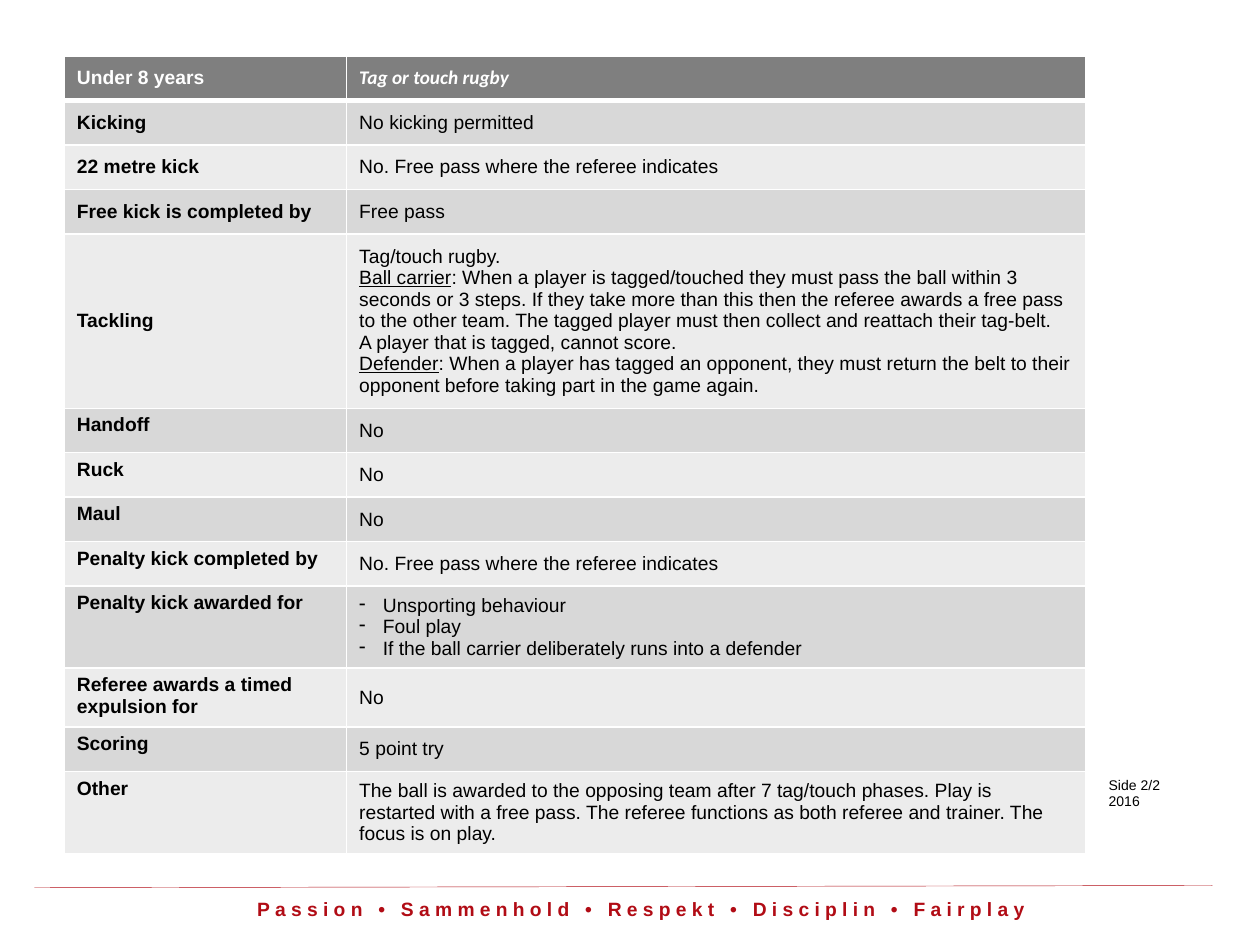
import pptx
import pptx.dml.color
import pptx.enum.shapes
import pptx.enum.text
import pptx.oxml
import pptx.oxml.ns
import pptx.util
from lxml import etree

Pt = pptx.util.Pt
ANCHOR = pptx.enum.text.MSO_ANCHOR
ALIGN = pptx.enum.text.PP_ALIGN

COLORS = {
    "header": "7F7F7F",
    "dark_band": "D8D8D8",
    "light_band": "ECECEC",
    "white": "FFFFFF",
    "black": "000000",
    "red": "B10C15",
}
ROW_HEIGHT = 25.4
TALL_ROWS = {"Tackling": 99, "Penalty kick awarded for": 46.8,
             "Referee awards a timed expulsion for": 33.2, "Other": 46.4}
JUSTIFIED = ("22 metre kick", "Free kick is completed by")
UNDERLINED = ("Ball carrier", "Defender")
FIRST_TOP_ROW = 5

RULES = [
    ("Under 8 years", ["Tag or touch rugby"]),
    ("Kicking", ["No kicking permitted"]),
    ("22 metre kick", ["No. Free pass where the referee indicates"]),
    ("Free kick is completed by", ["Free pass"]),
    ("Tackling", [
        "Tag/touch rugby.",
        "Ball carrier: When a player is tagged/touched they must pass the ball within 3 seconds "
        "or 3 steps. If they take more than this then the referee awards a free pass to the other "
        "team. The tagged player must then collect and reattach their tag-belt.",
        "A player that is tagged, cannot score.",
        "Defender: When a player has tagged an opponent, they must return the belt to their "
        "opponent before taking part in the game again.",
    ]),
    ("Handoff", ["No"]),
    ("Ruck", ["No"]),
    ("Maul", ["No"]),
    ("Penalty kick completed by", ["No. Free pass where the referee indicates"]),
    ("Penalty kick awarded for", [
        "Unsporting behaviour",
        "Foul play",
        "If the ball carrier deliberately runs into a defender",
    ]),
    ("Referee awards a timed expulsion for", ["No"]),
    ("Scoring", ["5 point try"]),
    ("Other", [
        "The ball is awarded to the opposing team after 7 tag/touch phases. Play is restarted "
        "with a free pass. The referee functions as both referee and trainer. The focus is on play.",
    ]),
]


def rgb(name):
    return pptx.dml.color.RGBColor.from_string(COLORS[name])


def format_run(run, size, color, bold=False, italic=False, face="Arial"):
    run.font.size = Pt(size)
    run.font.name = face
    run.font.bold = bold
    run.font.italic = italic
    run.font.color.rgb = rgb(color)


def write_lines(frame, lines, size, color, **style):
    frame.text = "\n".join(lines)
    for paragraph in frame.paragraphs:
        term, colon, rest = paragraph.text.partition(":")
        if term in UNDERLINED:
            paragraph.text = term
            paragraph.runs[0].font.underline = True
            paragraph.add_run().text = colon + rest
        for run in paragraph.runs:
            format_run(run, size, color, **style)


def add_dash(paragraph):
    properties = paragraph._p.get_or_add_pPr()
    properties.set("marL", str(Pt(13.5)))
    properties.set("indent", str(-Pt(13.5)))
    dash = etree.SubElement(properties, pptx.oxml.ns.qn("a:buChar"))
    dash.set("char", "-")


def add_borders(cell, is_header):
    properties = cell._tc.get_or_add_tcPr()
    for side in "LRTB":
        width = 3 if is_header and side == "B" else 1
        border = etree.SubElement(properties, pptx.oxml.ns.qn("a:ln" + side), w=str(Pt(width)))
        fill = etree.SubElement(border, pptx.oxml.ns.qn("a:solidFill"))
        etree.SubElement(fill, pptx.oxml.ns.qn("a:srgbClr"), val=COLORS["white"])


def fill_cell(cell, lines, band, anchor, **style):
    is_header = band == "header"
    add_borders(cell, is_header)
    cell.fill.solid()
    cell.fill.fore_color.rgb = rgb(band)
    cell.vertical_anchor = anchor
    write_lines(cell.text_frame, lines, 11, "white" if is_header else "black", **style)


def add_rules_table(slide):
    heights = [TALL_ROWS.get(topic, ROW_HEIGHT) for topic, _ in RULES]
    rules = slide.shapes.add_table(len(RULES), 2, Pt(36.7), Pt(32), Pt(584), Pt(sum(heights))).table
    for column, width in zip(rules.columns, (161.4, 422.6)):
        column.width = Pt(width)
    for index, (topic, lines) in enumerate(RULES):
        rules.rows[index].height = Pt(heights[index])
        band = "dark_band" if index % 2 else "light_band"
        answer_style = {}
        if index == 0:
            band = "header"
            answer_style = {"bold": True, "italic": True, "face": "Calibri"}
        topic_cell, answer_cell = rules.cell(index, 0), rules.cell(index, 1)
        topic_anchor = ANCHOR.MIDDLE if index < FIRST_TOP_ROW else ANCHOR.TOP
        fill_cell(topic_cell, [topic], band, topic_anchor, bold=True)
        fill_cell(answer_cell, lines, band, ANCHOR.MIDDLE, **answer_style)
        if topic in JUSTIFIED:
            topic_cell.text_frame.paragraphs[0].alignment = ALIGN.JUSTIFY
        if topic == "Penalty kick awarded for":
            for paragraph in answer_cell.text_frame.paragraphs:
                add_dash(paragraph)


def add_text(slide, left, top, width, height, lines, size, color, **style):
    frame = slide.shapes.add_textbox(Pt(left), Pt(top), Pt(width), Pt(height)).text_frame
    frame.word_wrap = True
    write_lines(frame, lines, size, color, **style)
    return frame


def add_motto(slide):
    motto = add_text(slide, 121, 509, 491, 34,
                     ["Passion • Sammenhold • Respekt • Disciplin • Fairplay"],
                     11, "red", bold=True).paragraphs[0]
    motto.alignment = ALIGN.CENTER
    motto.runs[0].font._element.set("spc", "300")


def add_footer_rule(slide):
    rule = slide.shapes.add_connector(pptx.enum.shapes.MSO_CONNECTOR.STRAIGHT,
                                      Pt(19.6), Pt(507.3), Pt(692.8), Pt(506))
    rule.line.color.rgb = rgb("red")
    rule.line.width = Pt(0.25)
    etree.SubElement(rule._element.spPr, pptx.oxml.ns.qn("a:effectLst"))


def main():
    deck = pptx.Presentation()
    deck.slide_width, deck.slide_height = Pt(720), Pt(540)
    slide = deck.slides.add_slide(deck.slide_layouts[6])
    add_motto(slide)
    add_footer_rule(slide)
    add_rules_table(slide)
    add_text(slide, 626.4, 440, 82, 26.6, ["Side 2/2", "2016"], 8, "black")
    deck.save("out.pptx")


if __name__ == "__main__":
    main()
